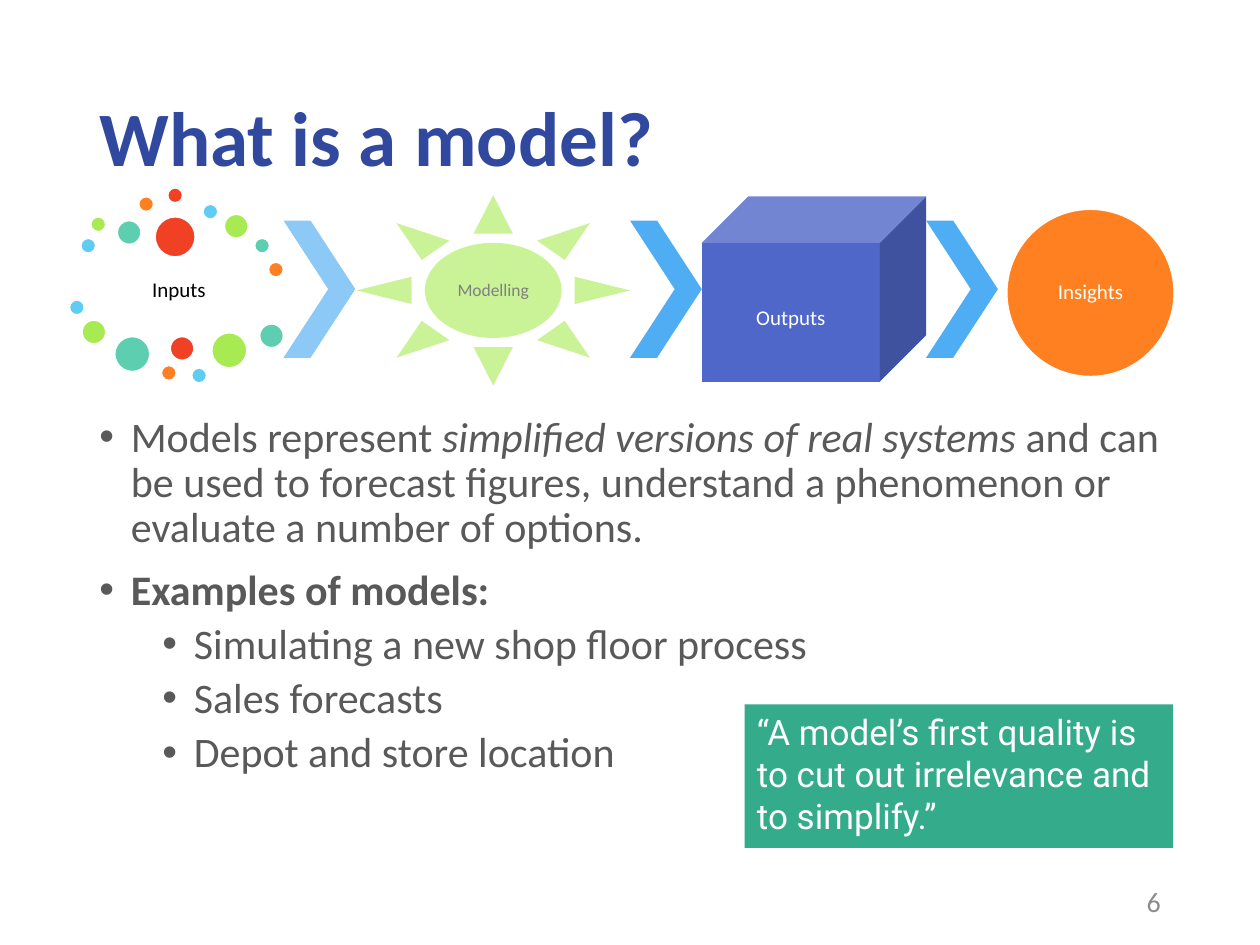
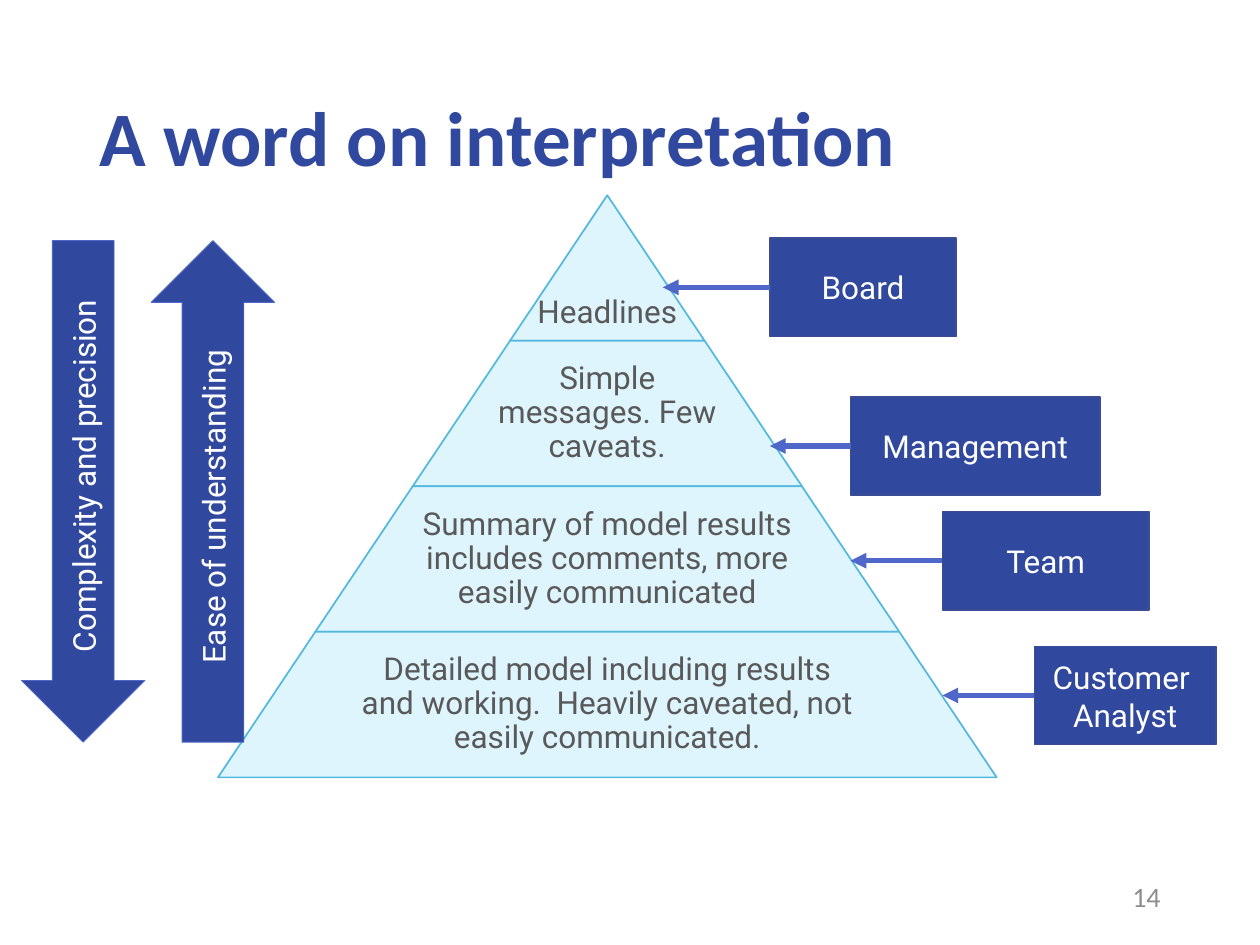
from itertools import cycle

from lxml import etree
from pptx import Presentation
from pptx.dml.color import RGBColor
from pptx.enum.shapes import MSO_CONNECTOR, MSO_SHAPE
from pptx.enum.text import MSO_ANCHOR, PP_ALIGN
from pptx.oxml.ns import qn
from pptx.util import Inches, Pt

# Shared style
LEFT, CENTER, RIGHT = PP_ALIGN.LEFT, PP_ALIGN.CENTER, PP_ALIGN.RIGHT
TOP, MIDDLE = MSO_ANCHOR.TOP, MSO_ANCHOR.MIDDLE
RECTANGLE, OVAL = MSO_SHAPE.RECTANGLE, MSO_SHAPE.OVAL
CHEVRON, SUN, CUBE = MSO_SHAPE.CHEVRON, MSO_SHAPE.SUN, MSO_SHAPE.CUBE
TRAPEZOID, UP_ARROW = MSO_SHAPE.TRAPEZOID, MSO_SHAPE.UP_ARROW
STRAIGHT = MSO_CONNECTOR.STRAIGHT
HEADING_FONT, LABEL_FONT = "Calibri", "Roboto"
COLORS = {
    "navy": "31489F", "navy edge": "3A4C94", "indigo": "4E67C8",
    "text": "595959", "page": "8C8C8C", "muted": "808080",
    "black": "000000", "white": "FFFFFF",
    "sky": "5ECCF3", "lime": "A7EA52", "teal": "5DCEAF",
    "orange": "FF8021", "red": "F14124",
    "pale blue": "8CC9F7", "blue": "4FADF3", "pale lime": "CAF297",
    "green": "34AC8B", "ice": "DFF5FD", "ice edge": "55B9DD",
}

# The slide is a grid of 10 columns and 7.5 rows
WIDTH, HEIGHT = Inches(10), Inches(7.5)
COLUMN, ROW = WIDTH / 10, HEIGHT / 7.5
MARGIN, CONTENT_WIDTH = 0.69, 8.62


def cells(left, top, width, height):
    return (round(left * COLUMN), round(top * ROW),
            round(width * COLUMN), round(height * ROW))


def color(name):
    return RGBColor.from_string(COLORS[name])


def style_run(run, size, font, color_name, bold=False, italic=False):
    run.font.size = Pt(size)
    run.font.name = font
    run.font.color.rgb = color(color_name)
    run.font.bold = bold
    run.font.italic = italic


def write(shape, text, size, color_name, font=LABEL_FONT, align=CENTER,
          anchor=MIDDLE, inset=None, spacing=None, bold=False):
    frame = shape.text_frame
    frame.text = text
    frame.word_wrap = True
    frame.vertical_anchor = anchor
    if inset is not None:
        frame.margin_left = frame.margin_right = Inches(inset)
        frame.margin_top = frame.margin_bottom = Inches(inset)
    for paragraph in frame.paragraphs:
        paragraph.alignment = align
        paragraph.line_spacing = spacing
        for run in paragraph.runs:
            style_run(run, size, font, color_name, bold)


def add_box(slide, kind, area, fill, edge=None, edge_width=1, adjust=None):
    shape = slide.shapes.add_shape(kind, *cells(*area))
    shape.shadow.inherit = False
    shape.fill.solid()
    shape.fill.fore_color.rgb = color(fill)
    if edge:
        shape.line.color.rgb = color(edge)
        shape.line.width = Pt(edge_width)
    else:
        shape.line.fill.background()
    if adjust is not None:
        shape.adjustments[0] = adjust
    return shape


def add_label(slide, area, text, size, color_name, **style):
    write(slide.shapes.add_textbox(*cells(*area)), text, size, color_name, **style)


def add_titled_slide(presentation, title, number, number_top):
    slide = presentation.slides.add_slide(presentation.slide_layouts[5])
    heading = slide.shapes.title
    heading.left, heading.top, heading.width, heading.height = cells(
        MARGIN, 0.4, CONTENT_WIDTH, 1.45)
    write(heading, title, 44, "navy", font=HEADING_FONT, align=LEFT,
          spacing=0.9, bold=True)
    add_label(slide, (7.06, number_top, 2.25, 0.4), number, 16, "page",
              font=HEADING_FONT, align=RIGHT)
    return slide


def add_bullets(slide, area, items):
    """Each item is a level and its runs; a run is a text and its emphasis."""
    frame = slide.shapes.add_textbox(*cells(*area)).text_frame
    frame.word_wrap = True
    for index, (level, runs) in enumerate(items):
        paragraph = frame.add_paragraph() if index else frame.paragraphs[0]
        paragraph.level = level
        paragraph.line_spacing = 0.9
        paragraph.space_before = Pt(5 if level else 10)
        for text, emphasis in runs:
            run = paragraph.add_run()
            run.text = text
            style_run(run, 24, HEADING_FONT, "text", **emphasis)
        properties = paragraph._p.get_or_add_pPr()
        properties.set("marL", str(Inches(0.25 + 0.5 * level)))
        properties.set("indent", str(Inches(-0.25)))
        etree.SubElement(properties, qn("a:buFont")).set("typeface", "Arial")
        etree.SubElement(properties, qn("a:buChar")).set("char", "•")


def add_arrow(slide, start, end, row):
    x1, y, x2, _ = cells(start, row, end, 0)
    arrow = slide.shapes.add_connector(STRAIGHT, x1, y, x2, y)
    arrow.line.color.rgb = color("indigo")
    arrow.line.width = Pt(3)
    line = arrow.line._get_or_add_ln()
    etree.SubElement(line, qn("a:tailEnd")).set("type", "triangle")
    etree.SubElement(arrow._element.spPr, qn("a:effectLst"))


def add_input_dots(slide):
    small, medium, large, largest = 0.12, 0.19, 0.28, 0.32
    dots = [
        (0.64, 1.89, small), (0.72, 1.72, small), (0.93, 1.75, medium),
        (1.1, 1.56, small), (1.33, 1.49, small), (1.61, 1.62, small),
        (1.78, 1.7, medium), (2.02, 1.89, small), (2.13, 2.08, small),
        (1.23, 1.72, largest), (0.55, 2.38, small), (0.65, 2.54, medium),
        (0.91, 2.67, large), (1.28, 2.9, small), (1.35, 2.67, medium),
        (1.52, 2.92, small), (1.68, 2.64, large), (2.06, 2.57, medium),
    ]
    fills = cycle(["sky", "lime", "teal", "orange", "red"])
    for (left, top, size), fill in zip(dots, fills):
        add_box(slide, OVAL, (left, top, size, size), fill, "white")


def add_model_process(slide):
    step_text = {"font": HEADING_FONT, "spacing": 0.9, "inset": 0.02}
    add_label(slide, (0.64, 2.05, 1.56, 0.51), "Inputs", 12, "black", **step_text)
    add_input_dots(slide)
    for left, fill in [(2.25, "pale blue"), (5, "blue"), (7.35, "blue")]:
        add_box(slide, CHEVRON, (left, 1.75, 0.57, 1.09), fill, adjust=0.623)
    modelling = add_box(slide, SUN, (2.83, 1.55, 2.17, 1.51), "pale lime")
    write(modelling, "Modelling", 10, "muted", **step_text)
    outputs = add_box(slide, CUBE, (5.57, 1.56, 1.78, 1.47), "indigo")
    write(outputs, "Outputs", 12, "white", **step_text)
    outputs.text_frame.margin_top = Inches(0.12)
    insights = add_box(slide, OVAL, (7.99, 1.66, 1.33, 1.33), "orange", "white")
    write(insights, "Insights", 12, "white", **step_text)


def add_pyramid(slide, messages):
    center, top, level_height, width_step = 4.82, 1.55, 1.155, 1.545
    for level, message in enumerate(messages):
        width = width_step * (level + 1)
        row = top + level * level_height
        add_box(slide, TRAPEZOID, (center - width / 2, row, width, level_height),
                "ice", "ice edge", adjust=width_step / 2 / level_height)
        # The peak is narrow, so its text sits low and spans the full width
        text_width = width * 0.65 if level else width
        text_top = 0 if level else 0.72
        add_label(slide, (center - text_width / 2, row + text_top,
                          text_width, level_height - text_top),
                  message, 18, "text", inset=0.03, spacing=0.9)


def add_scale_arrow(slide, left, text, direction, rotation=0):
    arrow = add_box(slide, UP_ARROW, (left, 1.91, 0.98, 3.98), "navy", "indigo", 0.5)
    arrow.rotation = rotation
    write(arrow, text, 18, "white")
    arrow.text_frame._txBody.bodyPr.set("vert", direction)


def add_audiences(slide, audiences):
    """Each arrow ends in line with the left side of the audience above."""
    box_height, tip = 0.78, 5.26
    for name, left, top, width in audiences:
        box = add_box(slide, RECTANGLE, (left, top, width, box_height),
                      "navy", "navy edge")
        write(box, name, 18, "white")
        add_arrow(slide, left, tip, top + box_height / 2)
        tip = left


def build_model_slide(presentation):
    slide = add_titled_slide(presentation, "What is a model?", "6", 6.95)
    add_bullets(slide, (MARGIN, 3.25, CONTENT_WIDTH, 3.51), [
        (0, [("Models represent ", {}),
             ("simplified versions of real systems ", {"italic": True}),
             ("and can be used to forecast figures, understand a phenomenon "
              "or evaluate a number of options.", {})]),
        (0, [("Examples of models:", {"bold": True})]),
        (1, [("Simulating a new shop floor process", {})]),
        (1, [("Sales forecasts", {})]),
        (1, [("Depot and store location", {})]),
    ])
    add_model_process(slide)
    quote = add_box(slide, RECTANGLE, (5.91, 5.59, 3.4, 1.14), "green")
    write(quote, "“A model’s first quality is to cut out irrelevance and to simplify.”",
          20, "white", align=LEFT, anchor=TOP)


def build_interpretation_slide(presentation):
    slide = add_titled_slide(presentation, "A word on interpretation", "14", 6.91)
    add_pyramid(slide, [
        "Headlines",
        "Simple messages. Few caveats.",
        "Summary of model results includes comments, more easily communicated",
        "Detailed model including results and working.  Heavily caveated, "
        "not easily communicated.",
    ])
    add_scale_arrow(slide, 0.17, "Complexity and precision", "vert", rotation=180)
    add_scale_arrow(slide, 1.2, "Ease of understanding", "vert270")
    add_audiences(slide, [
        ("Board", 6.11, 1.89, 1.48),
        ("Management", 6.75, 3.15, 1.98),
        ("Team", 7.48, 4.06, 1.64),
        ("Customer \nAnalyst", 8.21, 5.13, 1.44),
    ])


def main():
    presentation = Presentation()
    presentation.slide_width, presentation.slide_height = WIDTH, HEIGHT
    build_model_slide(presentation)
    build_interpretation_slide(presentation)
    presentation.save("out.pptx")


if __name__ == "__main__":
    main()
